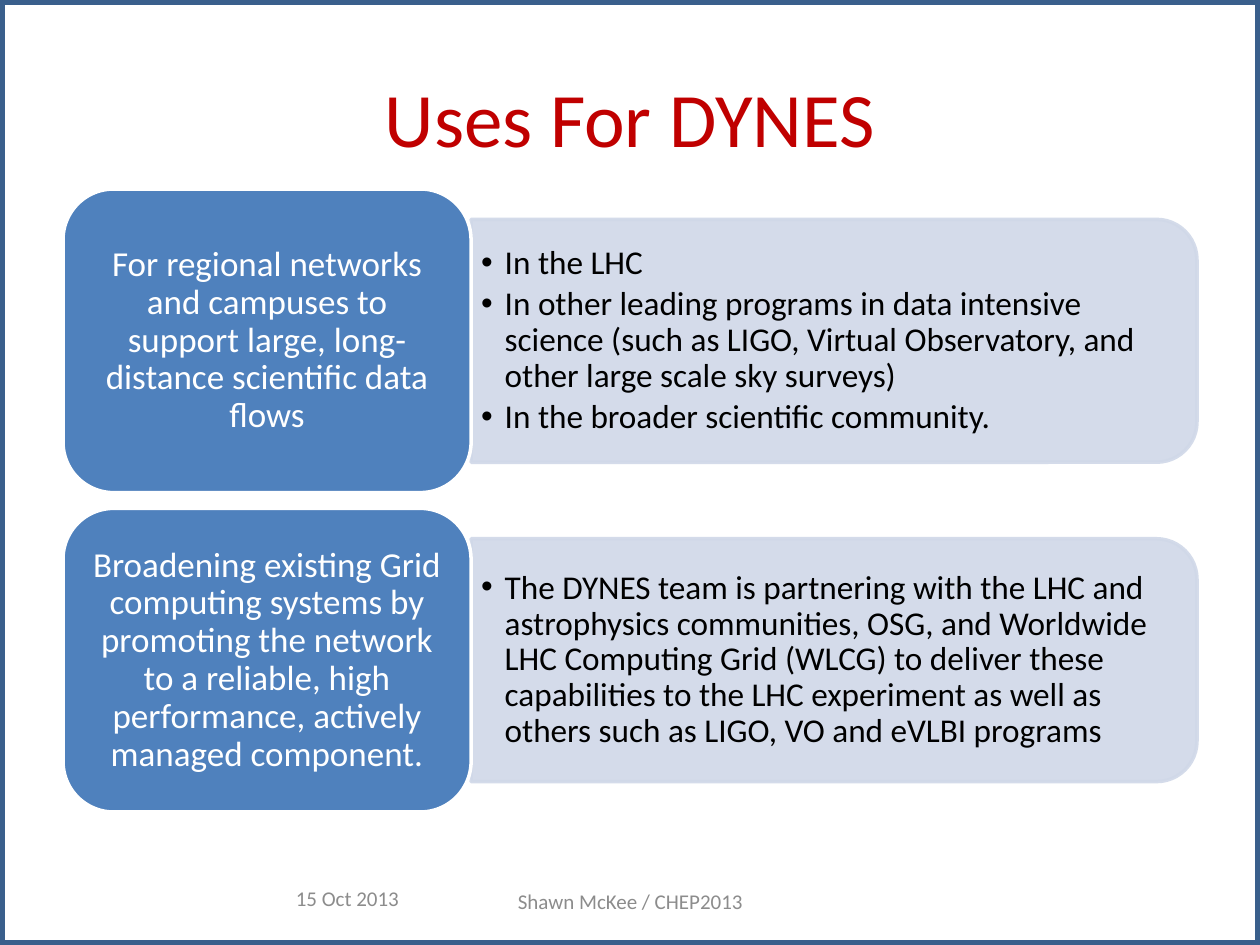
from lxml.etree import SubElement
from pptx import Presentation
from pptx.dml.color import RGBColor
from pptx.enum.shapes import MSO_SHAPE
from pptx.enum.text import MSO_ANCHOR, PP_ALIGN
from pptx.oxml.ns import qn
from pptx.util import Pt

WHITE = RGBColor(0xFF, 0xFF, 0xFF)
BLACK = RGBColor(0x00, 0x00, 0x00)
RED = RGBColor(0xC0, 0x00, 0x00)
GRAY = RGBColor(0x8C, 0x8C, 0x8C)
NAVY = RGBColor(0x3A, 0x5F, 0x8C)
BLUE = RGBColor(0x4F, 0x81, 0xBD)
PALE = RGBColor(0xD0, 0xD8, 0xE8)

USES = [
    ("For regional networks and campuses to support large, long-distance scientific data flows",
     ["In the LHC",
      "In other leading programs in data intensive science (such as LIGO, "
      "Virtual Observatory, and other large scale sky surveys)",
      "In the broader scientific community."]),
    ("Broadening existing Grid computing systems by promoting the network to a reliable, "
     "high performance, actively managed component.",
     ["The DYNES team is partnering with the LHC and astrophysics communities, OSG, and "
      "Worldwide LHC Computing Grid (WLCG) to deliver these capabilities to the LHC "
      "experiment as well as others such as LIGO, VO and eVLBI programs"]),
]


def add_box(slide, kind, box, fill, line, width):
    shape = slide.shapes.add_shape(kind, *[Pt(v) for v in box])
    shape.shadow.inherit = False
    shape.fill.solid()
    shape.fill.fore_color.rgb = fill
    shape.line.color.rgb = line
    shape.line.width = Pt(width)
    return shape


def set_text(shape, lines, size, color, align, inset=(7.2, 3.6)):
    frame = shape.text_frame
    frame.word_wrap = True
    frame.vertical_anchor = MSO_ANCHOR.MIDDLE
    frame.margin_left = frame.margin_right = Pt(inset[0])
    frame.margin_top = frame.margin_bottom = Pt(inset[1])
    frame.text = "\n".join(lines)
    for para in frame.paragraphs:
        para.alignment = align
        for run in para.runs:
            run.font.name = "Calibri"
            run.font.size = Pt(size)
            run.font.color.rgb = color
    return frame.paragraphs


def add_label(slide, box, text, size, color, align):
    label = slide.shapes.add_textbox(*[Pt(v) for v in box])
    set_text(label, [text], size, color, align)


def add_panel(slide, box, lines):
    left, top, width, height = box
    turned = (left + (width - height) / 2, top + (height - width) / 2, height, width)
    panel = add_box(slide, MSO_SHAPE.ROUND_2_SAME_RECTANGLE, turned, PALE, PALE, 2)
    panel.rotation = 90
    for color in panel._element.spPr.iter(qn("a:srgbClr")):
        SubElement(color, qn("a:alpha"), val="90000")

    text = slide.shapes.add_textbox(Pt(left), Pt(top + 7), Pt(width - 6.5), Pt(height - 14))
    for para in set_text(text, lines, 19, BLACK, PP_ALIGN.LEFT, (5.76, 2.88)):
        para.line_spacing = 0.9
        para.space_after = Pt(2.85)
        props = para._p.get_or_add_pPr()
        props.set("marL", str(Pt(13.5)))
        props.set("indent", str(-Pt(13.5)))
        SubElement(props, qn("a:buFont"), typeface="Arial")
        SubElement(props, qn("a:buChar"), char="•")


def add_use(slide, box, head, lines):
    left, top, width, height = box
    split = 233.2
    pad = height * 0.1
    add_panel(slide, (left + split, top + pad, width - split, height - 2 * pad), lines)
    card = add_box(slide, MSO_SHAPE.ROUNDED_RECTANGLE, (left, top, split, height), BLUE, WHITE, 2)
    for para in set_text(card, [head], 20, WHITE, PP_ALIGN.CENTER, (5.76, 2.88)):
        para.line_spacing = 0.9


def add_uses(slide, box):
    left, top, width, height = box
    gap = 9
    step = (height + gap) / len(USES)
    for i, (head, lines) in enumerate(USES):
        add_use(slide, (left, top + i * step, width, step - gap), head, lines)


def add_footer(slide, box):
    left, top, width, height = box
    add_label(slide, (left, top, 78, height), "15 Oct 2013", 12, GRAY, PP_ALIGN.LEFT)
    add_label(slide, (left + 84, top + 1.5, width - 84, height),
              "Shawn McKee / CHEP2013", 12, GRAY, PP_ALIGN.CENTER)


def main():
    deck = Presentation()
    deck.slide_width, deck.slide_height = Pt(720), Pt(540)
    slide = deck.slides.add_slide(deck.slide_layouts[6])
    add_box(slide, MSO_SHAPE.RECTANGLE, (0, 0, 720, 540), WHITE, NAVY, 6)
    add_label(slide, (36, 21.6, 648, 90), "Uses For DYNES", 44, RED, PP_ALIGN.CENTER)
    add_uses(slide, (36, 108, 648, 356))
    add_footer(slide, (162, 499, 312.5, 28.8))
    deck.save("out.pptx")


if __name__ == "__main__":
    main()
